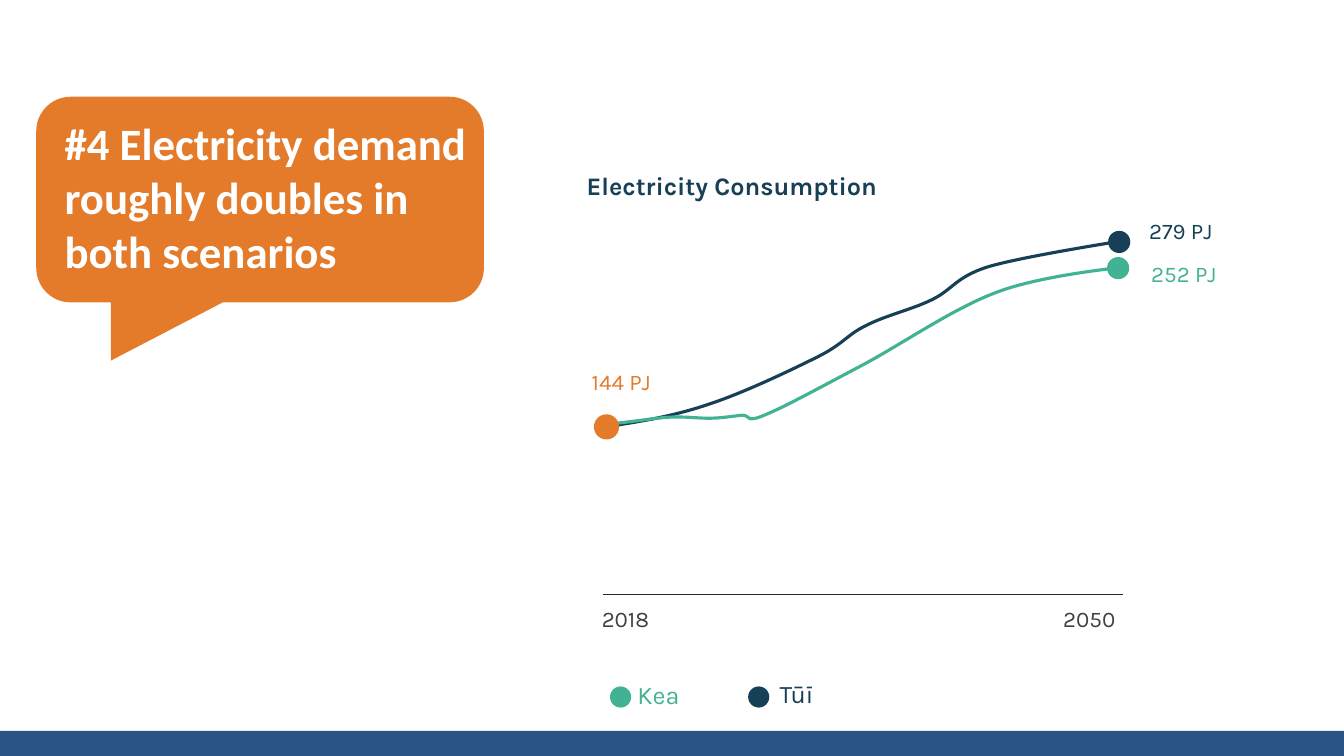
from pptx import Presentation
from pptx.dml.color import RGBColor
from pptx.enum.shapes import MSO_CONNECTOR as CONNECTOR, MSO_SHAPE as SHAPE
from pptx.enum.text import MSO_ANCHOR as ANCHOR, MSO_AUTO_SIZE as AUTO_SIZE, PP_ALIGN as ALIGN
from pptx.oxml.ns import qn
from pptx.util import Inches, Pt

NAVY, GREEN, ORANGE = "174057", "42B295", "E37B2A"
BLUE, WHITE, GREY, BLACK = "2A5484", "FFFFFF", "404040", "262626"

# Each curve: a start point, then Bézier segments (two control points, end point)
TUI_START = (6.04, 4.23)
TUI_SEGMENTS = [
    ((6.36, 4.18), (6.68, 4.13), (7.03, 4.01)),
    ((7.37, 3.9), (7.85, 3.67), (8.11, 3.54)),
    ((8.37, 3.41), (8.4, 3.32), (8.59, 3.23)),
    ((8.78, 3.13), (9.05, 3.07), (9.25, 2.97)),
    ((9.45, 2.87), (9.48, 2.75), (9.79, 2.65)),
    ((10.11, 2.55), (11.13, 2.39), (11.13, 2.39)),
]
KEA_START = (6.11, 4.2)
KEA_SEGMENTS = [
    ((6.3, 4.18), (6.48, 4.15), (6.63, 4.14)),
    ((6.79, 4.13), (6.91, 4.15), (7.03, 4.15)),
    ((7.15, 4.15), (7.26, 4.13), (7.36, 4.12)),
    ((7.45, 4.12), (7.39, 4.2), (7.58, 4.12)),
    ((7.78, 4.04), (8.16, 3.83), (8.54, 3.63)),
    ((8.92, 3.43), (9.44, 3.07), (9.86, 2.91)),
    ((10.28, 2.74), (11.07, 2.66), (11.07, 2.66)),
]


def rgb(color):
    return RGBColor.from_string(color)


def style_text(paragraph, size, font, color, bold=False, align=ALIGN.LEFT):
    paragraph.alignment = align
    paragraph.font.size = Pt(size)
    paragraph.font.name = font
    paragraph.font.bold = bold
    paragraph.font.color.rgb = rgb(color)


def add_filled(slide, preset, left, top, width, height, color):
    filled = slide.shapes.add_shape(
        preset, Inches(left), Inches(top), Inches(width), Inches(height))
    filled.shadow.inherit = False
    filled.fill.solid()
    filled.fill.fore_color.rgb = rgb(color)
    filled.line.fill.background()
    return filled


def add_dot(slide, left, top, color, size=0.22):
    add_filled(slide, SHAPE.OVAL, left, top, size, size, color)


def add_label(slide, text, left, top, width, color, size=16, bold=False, align=ALIGN.LEFT):
    label = slide.shapes.add_textbox(Inches(left), Inches(top), Inches(width), Inches(0.4))
    frame = label.text_frame
    frame.word_wrap = True
    frame.auto_size = AUTO_SIZE.SHAPE_TO_FIT_TEXT
    frame.text = text
    style_text(frame.paragraphs[0], size, "Karla", color, bold, align)


def to_emu(point):
    return tuple(Inches(value) for value in point)


def add_curve(slide, start, segments, color):
    builder = slide.shapes.build_freeform(*to_emu(start))
    builder.add_line_segments(
        [to_emu(point) for segment in segments for point in segment], close=False)
    curve = builder.convert_to_shape()
    # Join every three straight steps into one Bézier segment
    steps = list(curve.element.iter(qn("a:lnTo")))
    for first in range(0, len(steps), 3):
        bezier = curve.element.makeelement(qn("a:cubicBezTo"), {})
        steps[first].addprevious(bezier)
        for step in steps[first:first + 3]:
            bezier.append(step[0])
            step.getparent().remove(step)
    curve.shadow.inherit = False
    curve.fill.background()
    curve.line.color.rgb = rgb(color)
    curve.line.width = Pt(2.25)


def add_axis(slide, left, right, y):
    axis = slide.shapes.add_connector(
        CONNECTOR.STRAIGHT, Inches(left), Inches(y), Inches(right), Inches(y))
    axis.line.color.rgb = rgb(BLACK)
    axis.line.width = Pt(1)
    properties = axis.element.spPr
    properties.append(properties.makeelement(qn("a:effectLst"), {}))


def add_headline(slide, text):
    callout = add_filled(slide, SHAPE.ROUNDED_RECTANGULAR_CALLOUT,
                         0.36, 0.96, 4.44, 2.04, ORANGE)
    for index, value in enumerate((-0.333, 0.783, 0.167)):
        callout.adjustments[index] = value
    title = slide.shapes.title
    title.left, title.top = Inches(0.54), Inches(1.1)
    title.width, title.height = Inches(4.31), Inches(2.87)
    frame = title.text_frame
    frame.text = text
    frame.word_wrap = True
    frame.auto_size = AUTO_SIZE.NONE
    frame.vertical_anchor = ANCHOR.TOP
    style_text(frame.paragraphs[0], 32, "Calibri", WHITE, bold=True)
    # Bring the title in front of its callout
    callout.element.addnext(title.element)


def main():
    deck = Presentation()
    deck.slide_width, deck.slide_height = Inches(13.33), Inches(7.5)
    slide = deck.slides.add_slide(deck.slide_layouts[5])

    # Footer band and headline
    add_filled(slide, SHAPE.RECTANGLE, 0, 7.25, 13.33, 0.25, BLUE)
    add_headline(slide, "#4 Electricity demand roughly doubles in both scenarios")

    # Legend
    add_label(slide, "Tūī", 7.27, 6.68, 1.26, NAVY, size=18, align=ALIGN.CENTER)
    add_label(slide, "Kea", 6.07, 6.69, 0.92, GREEN, size=18, align=ALIGN.CENTER)
    add_dot(slide, 6.05, 6.81, GREEN, size=0.21)
    add_dot(slide, 7.42, 6.81, NAVY, size=0.21)

    # Time axis
    add_axis(slide, 5.98, 11.14, 5.9)
    add_label(slide, "2018", 5.87, 5.95, 2.85, GREY)
    add_label(slide, "2050", 10.15, 5.95, 1.01, GREY, align=ALIGN.RIGHT)

    # Consumption curves with their end points
    add_label(slide, "Electricity Consumption", 5.72, 1.64, 6.32, NAVY, size=18, bold=True)
    add_dot(slide, 10.99, 2.29, NAVY)
    add_dot(slide, 10.98, 2.55, GREEN)
    add_curve(slide, TUI_START, TUI_SEGMENTS, NAVY)
    add_curve(slide, KEA_START, KEA_SEGMENTS, GREEN)
    add_dot(slide, 5.89, 4.11, ORANGE, size=0.25)

    # Values
    add_label(slide, "279 PJ", 11.3, 2.11, 2, NAVY)
    add_label(slide, "252 PJ", 11.32, 2.53, 2, GREEN)
    add_label(slide, "144 PJ", 5.77, 3.6, 0.98, ORANGE)

    deck.save("out.pptx")


if __name__ == "__main__":
    main()
